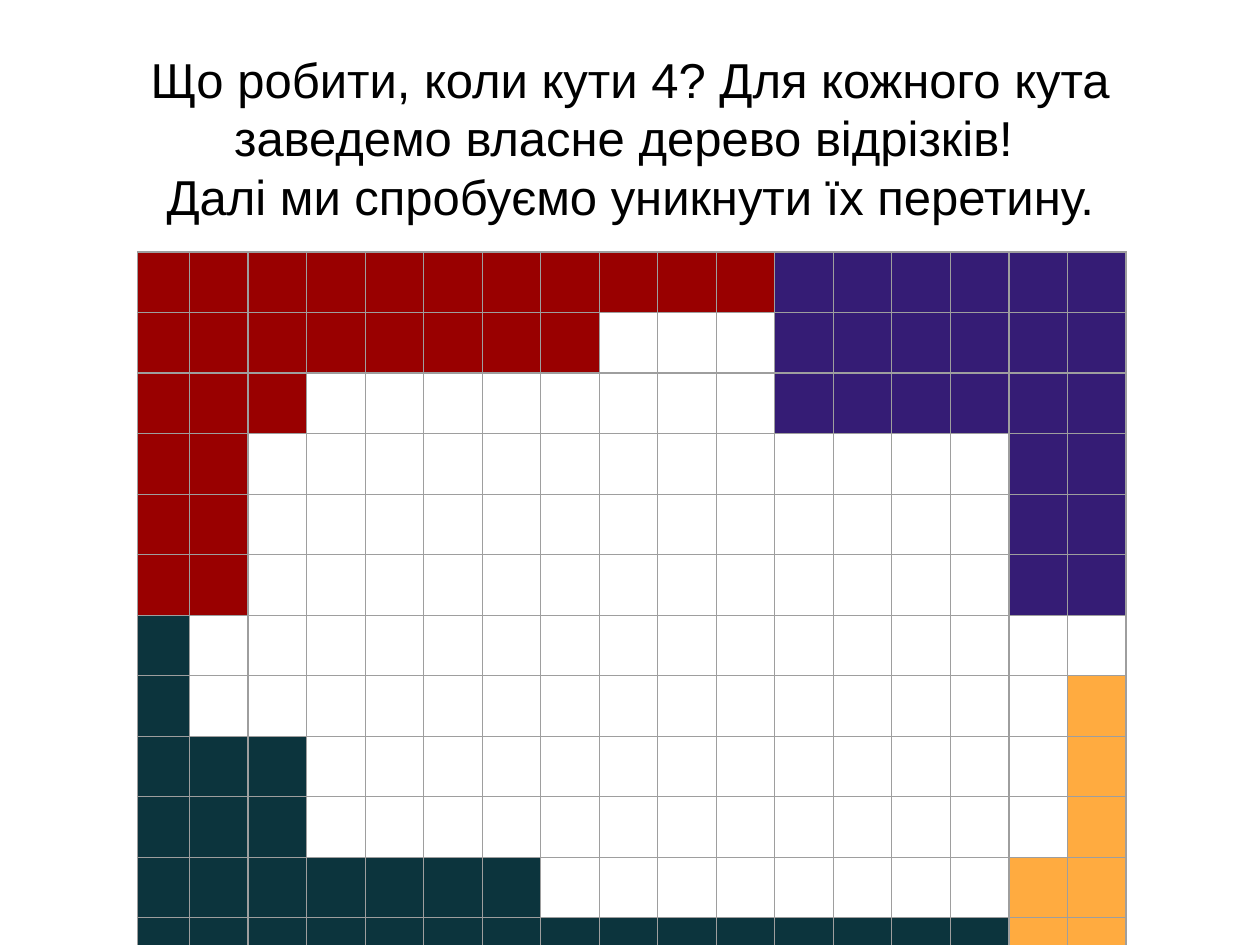
from dataclasses import dataclass

import lxml.etree
import pptx
import pptx.dml.color
import pptx.enum.text
import pptx.oxml.ns
import pptx.slide
import pptx.table
import pptx.util
from pptx.util import Cm

COLORS = {
    "red": "990000",
    "violet": "351C75",
    "teal": "0C343D",
    "orange": "FFAB40",
    "white": "FFFFFF",
    "grid": "9E9E9E",
    "text": "000000",
}
TITLE = (
    "Що робити, коли кути 4? Для кожного кута заведемо власне дерево відрізків! "
    "\vДалі ми спробуємо уникнути їх перетину."
)
COLUMN_COUNT = 17
FIRST_COLUMN, COLUMN, ROW = Cm(1.05), Cm(1.18), Cm(1.22)
BORDER_WIDTH = pptx.util.Pt(0.75)


@dataclass(frozen=True)
class GridRow:
    """Cells claimed from the left and right corners; the rest stays free."""

    left_color: str
    left_count: int
    right_color: str
    right_count: int

    def colors(self) -> list[str]:
        free = COLUMN_COUNT - self.left_count - self.right_count
        return (
            [self.left_color] * self.left_count
            + ["white"] * free
            + [self.right_color] * self.right_count
        )


GRID_ROWS = [
    GridRow("red", 11, "violet", 6),
    GridRow("red", 8, "violet", 6),
    GridRow("red", 3, "violet", 6),
    *[GridRow("red", 2, "violet", 2)] * 3,
    GridRow("teal", 1, "orange", 0),
    GridRow("teal", 1, "orange", 1),
    *[GridRow("teal", 3, "orange", 1)] * 2,
    GridRow("teal", 7, "orange", 2),
    GridRow("teal", 15, "orange", 2),
]


def rgb(name: str) -> pptx.dml.color.RGBColor:
    return pptx.dml.color.RGBColor.from_string(COLORS[name])


def add_title(slide: pptx.slide.Slide) -> None:
    frame = slide.shapes.add_textbox(Cm(0.87), Cm(0.74), Cm(23.67), Cm(1.75)).text_frame
    frame.word_wrap = True
    frame.margin_left = frame.margin_right = Cm(0.25)
    frame.margin_top = frame.margin_bottom = Cm(0.25)
    title = frame.paragraphs[0]
    title.text = TITLE
    title.alignment = pptx.enum.text.PP_ALIGN.CENTER
    title.font.name = "Arial"
    title.font.size = pptx.util.Pt(28)
    title.font.color.rgb = rgb("text")


def paint_cell(cell: pptx.table._Cell, color: str) -> None:
    """Draw the four borders, then the fill, in the order the schema requires."""
    properties = cell._tc.get_or_add_tcPr()
    qn = pptx.oxml.ns.qn
    for side in ("a:lnL", "a:lnR", "a:lnT", "a:lnB"):
        line = lxml.etree.SubElement(properties, qn(side), w=str(BORDER_WIDTH))
        solid = lxml.etree.SubElement(line, qn("a:solidFill"))
        lxml.etree.SubElement(solid, qn("a:srgbClr"), val=COLORS["grid"])
    cell.fill.solid()
    cell.fill.fore_color.rgb = rgb(color)


def add_grid(slide: pptx.slide.Slide) -> None:
    width = FIRST_COLUMN + COLUMN * (COLUMN_COUNT - 1)
    grid = slide.shapes.add_table(
        len(GRID_ROWS), COLUMN_COUNT, Cm(2.77), Cm(5.08), width, ROW * len(GRID_ROWS)
    ).table
    grid.first_row = grid.horz_banding = False
    for index, column in enumerate(grid.columns):
        column.width = COLUMN if index else FIRST_COLUMN
    for row, grid_row in zip(grid.rows, GRID_ROWS):
        row.height = ROW
        for cell, color in zip(row.cells, grid_row.colors()):
            paint_cell(cell, color)


def main() -> None:
    presentation = pptx.Presentation()
    presentation.slide_width, presentation.slide_height = Cm(25.4), Cm(19.05)
    slide = presentation.slides.add_slide(presentation.slide_layouts[6])
    add_title(slide)
    add_grid(slide)
    presentation.save("out.pptx")


if __name__ == "__main__":
    main()
